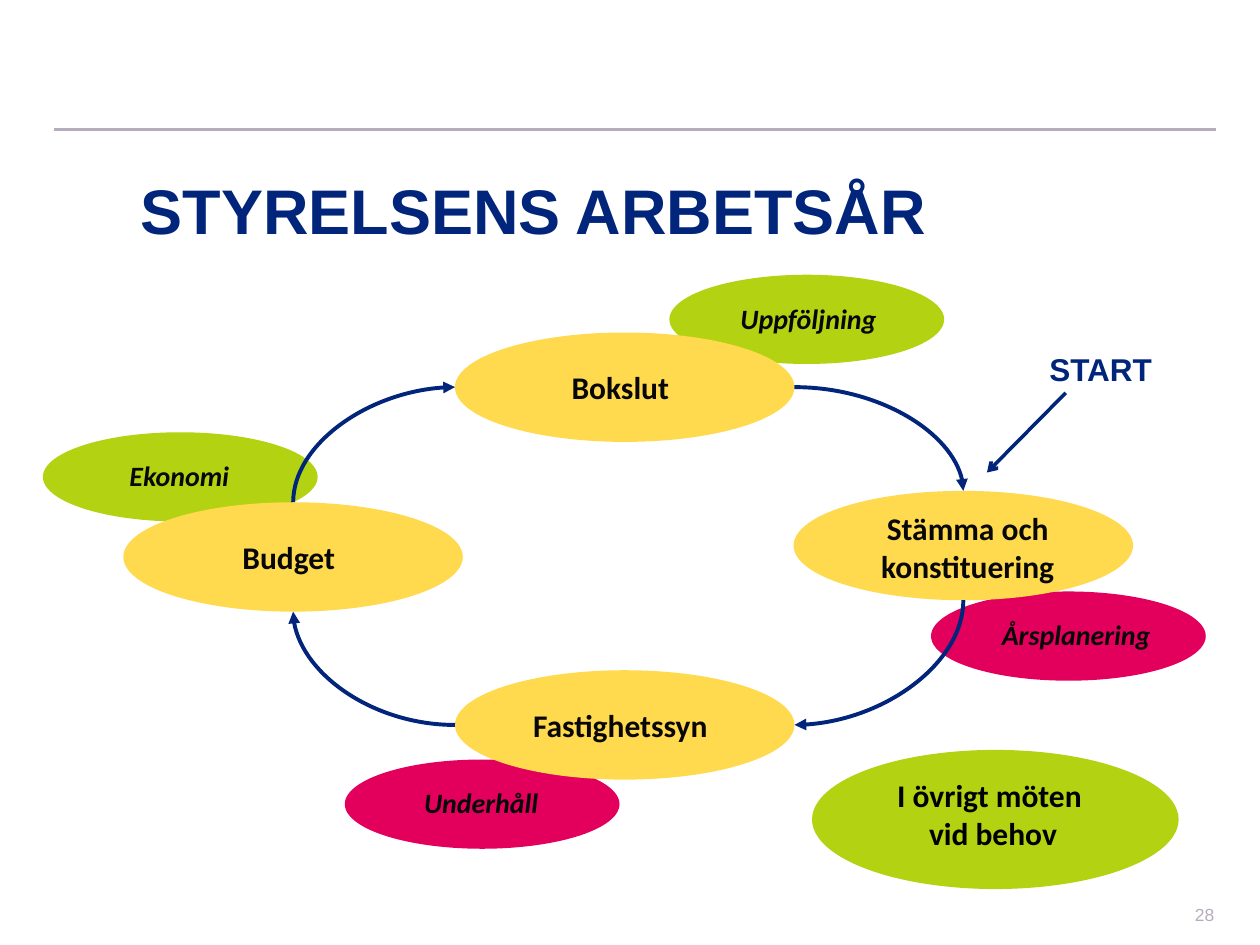
"""Build the slide showing the board's working year as a cycle."""
import lxml.etree
import pptx
import pptx.dml.color
import pptx.enum.shapes
import pptx.enum.text
import pptx.oxml.ns
import pptx.util

Pt = pptx.util.Pt
ALIGN = pptx.enum.text.PP_ALIGN
ANCHOR = pptx.enum.text.MSO_ANCHOR
FIT = pptx.enum.text.MSO_AUTO_SIZE
CONNECTOR = pptx.enum.shapes.MSO_CONNECTOR
OVAL = pptx.enum.shapes.MSO_SHAPE.OVAL
qn = pptx.oxml.ns.qn

THEME = {
    "navy": "00257A", "grey": "B5ACBD", "ink": "080808", "black": "000000",
    "yellow": "FFD94E", "green": "B3D312", "pink": "E3005D",
    "title": {"name": "Arial", "size": Pt(36), "bold": True},
    "start": {"name": "Arial", "size": Pt(18), "bold": True},
    "page": {"name": "Arial", "size": Pt(10)},
    "step": {"name": "Calibri", "size": Pt(18), "bold": True},
    "theme": {"name": "Calibri", "size": Pt(16), "bold": True, "italic": True},
}

TITLE = ("STYRELSENS ARBETSÅR", (73.5, 94.5, 564.5, 51))
START = ("START", (592.5, 196.5, 79, 29))
PAGE = ("28", (588, 515.5, 113, 14.5))
RULE = ((31, 74), (695, 74))
START_ARROW = ((609, 224.5), (564, 270))

THEME_SIZE = (157, 51)
THEMES = [
    ("Ekonomi", "green", (24.5, 247), 10),
    ("Uppföljning", "green", (382.5, 157), 11.5),
    ("Årsplanering", "pink", (532, 338), 15),
    ("Underhåll", "pink", (197, 434), 10),
]

STEP_SIZE = (194, 62.5)
STEPS = {
    "Budget": ((70.5, 287), (26.5, 17, 136, 29)),
    "Bokslut": ((260, 190), (26.5, 17, 136, 29)),
    "Stämma och konstituering": ((453.5, 280.5), (26, 7, 147, 51)),
    "Fastighetssyn": ((260, 383), (26.5, 17, 136, 29)),
}
EXTRA = ("I övrigt möten \vvid behov", (464, 428.5, 209.5, 79.5), (484.5, 440, 166, 50.5))

SIDES = {"top": (0, 0.5, 0), "left": (2, 0, 0.5), "bottom": (4, 0.5, 1), "right": (6, 1, 0.5)}
CYCLE = [
    ("Budget", "top", "Bokslut", "left", {"rot": "5400000", "flipH": "1", "flipV": "1"}),
    ("Bokslut", "right", "Stämma och konstituering", "top", {}),
    ("Stämma och konstituering", "bottom", "Fastighetssyn", "right", {"rot": "5400000"}),
    ("Fastighetssyn", "left", "Budget", "bottom", {"rot": "10800000"}),
]


def rgb(color):
    return pptx.dml.color.RGBColor.from_string(THEME[color])


def add_oval(slide, box, color):
    oval = slide.shapes.add_shape(OVAL, *map(Pt, box))
    oval.shadow.inherit = False
    oval.fill.solid()
    oval.fill.fore_color.rgb = rgb(color)
    oval.line.fill.background()
    return oval


def add_label(slide, text, box, style, color="ink", align=ALIGN.CENTER,
              anchor=ANCHOR.TOP, fit=FIT.SHAPE_TO_FIT_TEXT):
    frame = slide.shapes.add_textbox(*map(Pt, box)).text_frame
    for key, value in {"word_wrap": True, "auto_size": fit, "vertical_anchor": anchor}.items():
        setattr(frame, key, value)
    paragraph = frame.paragraphs[0]
    paragraph.text = text
    paragraph.alignment = align
    for run in paragraph.runs:
        for key, value in THEME[style].items():
            setattr(run.font, key, value)
        run.font.color.rgb = rgb(color)


def add_line(slide, begin, end, color, width, head=None, kind=CONNECTOR.STRAIGHT):
    line = slide.shapes.add_connector(kind, *map(Pt, begin + end))
    line.line.color.rgb = rgb(color)
    line.line.width = Pt(width)
    if head:
        lxml.etree.SubElement(line.line._get_or_add_ln(), qn("a:tailEnd"), type=head)
    lxml.etree.SubElement(line._element.spPr, qn("a:effectLst"))
    return line


def side_point(step, side):
    _, across, down = SIDES[side]
    left, top = STEPS[step][0]
    return left + across * STEP_SIZE[0], top + down * STEP_SIZE[1]


def add_curve(slide, ovals, source, source_side, target, target_side, turn):
    (x1, y1), (x2, y2) = side_point(source, source_side), side_point(target, target_side)
    width, height = abs(x2 - x1), abs(y2 - y1)
    if turn.get("rot") == "5400000":
        width, height = height, width
    left, top = (x1 + x2 - width) / 2, (y1 + y2 - height) / 2
    curve = add_line(slide, (left, top), (left + width, top + height),
                     "navy", 2.25, "triangle", CONNECTOR.CURVE)
    element = curve._element
    element.spPr.find(qn("a:prstGeom")).set("prst", "curvedConnector2")
    for key, value in turn.items():
        element.spPr.find(qn("a:xfrm")).set(key, value)
    ends = element.find(qn("p:nvCxnSpPr")).find(qn("p:cNvCxnSpPr"))
    for tag, step, side in (("a:stCxn", source, source_side), ("a:endCxn", target, target_side)):
        lxml.etree.SubElement(ends, qn(tag), id=str(ovals[step].shape_id), idx=str(SIDES[side][0]))


def main():
    deck = pptx.Presentation()
    deck.slide_width, deck.slide_height = Pt(720), Pt(540)
    slide = deck.slides.add_slide(deck.slide_layouts[6])

    add_line(slide, *RULE, "grey", 1.5)
    add_label(slide, *TITLE, "title", "navy", ALIGN.LEFT)

    for name, color, (left, top), indent in THEMES:
        add_oval(slide, (left, top) + THEME_SIZE, color)
        add_label(slide, name, (left + indent, top + 11.5, 136, 26.5), "theme")

    ovals = {}
    for name, ((left, top), (indent, drop, width, height)) in STEPS.items():
        ovals[name] = add_oval(slide, (left, top) + STEP_SIZE, "yellow")
        add_label(slide, name, (left + indent, top + drop, width, height), "step")
    for leg in CYCLE:
        add_curve(slide, ovals, *leg)

    extra, extra_oval, extra_label = EXTRA
    add_oval(slide, extra_oval, "green")
    add_label(slide, extra, extra_label, "step", "black")

    add_label(slide, *PAGE, "page", "grey", ALIGN.RIGHT, ANCHOR.MIDDLE, FIT.NONE)
    add_label(slide, *START, "start", "navy", ALIGN.LEFT)
    add_line(slide, *START_ARROW, "navy", 2, "arrow")
    deck.save("out.pptx")


if __name__ == "__main__":
    main()
